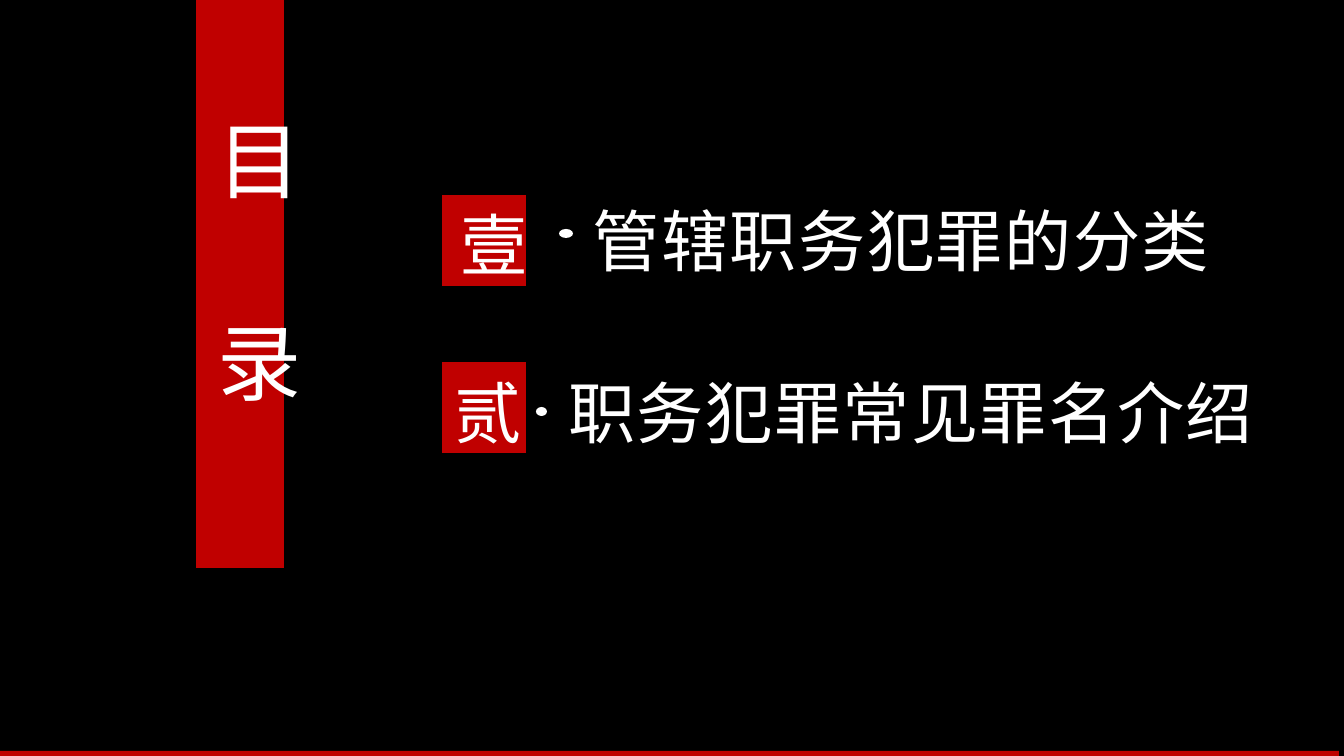
from pptx import Presentation
from pptx.dml.color import RGBColor
from pptx.enum.shapes import MSO_SHAPE
from pptx.enum.text import PP_ALIGN
from pptx.util import Emu, Pt

# Boxes are (left, top, width, height) in px
HEADING = ("目", "录")
HEADING_BOX = (208, 95, 64, 315)
BANNER = (196, -2, 88, 570)
FOOTER_LINE = (0, 751, 1339, 5)
ENTRIES = [
    {
        "square": (442, 195, 84, 91),
        "number": ("壹", (447, 192, 95, 92)),
        "dot": (559, 229, 14, 9),
        "title": ("管辖职务犯罪的分类", (574, 188, 654, 173)),
    },
    {
        "square": (442, 362, 84, 91),
        "number": ("贰", (435, 360, 106, 92)),
        "dot": (536, 407, 11, 9),
        "title": ("职务犯罪常见罪名介绍", (547, 360, 728, 173)),
    },
]

PX_PER_INCH = 100.8
FONT = "Noto Sans CJK SC"
HEADING_SIZE, ENTRY_SIZE = 60, 48
LINE_HEIGHT = 1.2  # in font sizes
TOP_INSET = 0.1  # in font sizes, added to the normal inset
BLACK = RGBColor(0x00, 0x00, 0x00)
RED = RGBColor(0xC0, 0x00, 0x00)
WHITE = RGBColor(0xFF, 0xFF, 0xFF)


def px(length):
    return Emu(round(length * 914400 / PX_PER_INCH))


def add_block(slide, box, color, preset=MSO_SHAPE.RECTANGLE):
    shape = slide.shapes.add_shape(preset, *map(px, box))
    shape.shadow.inherit = False
    shape.fill.solid()
    shape.fill.fore_color.rgb = color
    shape.line.fill.background()


def add_text(slide, lines, box, size):
    """Add centred white lines, with one empty line's height between them."""
    frame = slide.shapes.add_textbox(*map(px, box)).text_frame
    frame.word_wrap = True
    frame.margin_top = Pt(3.6 + TOP_INSET * size)
    for index, line in enumerate(lines):
        paragraph = frame.add_paragraph() if index else frame.paragraphs[0]
        paragraph.alignment = PP_ALIGN.CENTER
        paragraph.line_spacing = Pt(LINE_HEIGHT * size)
        if index:
            paragraph.space_before = Pt(LINE_HEIGHT * size)
        run = paragraph.add_run()
        run.text = line
        run.font.size = Pt(size)
        run.font.name = FONT
        run.font.color.rgb = WHITE
        properties = run._r.get_or_add_rPr()
        properties.set("spc", "110")
        latin = properties.find("{*}latin")
        east_asian = latin.makeelement(latin.tag.replace("latin", "ea"), {"typeface": FONT})
        latin.addnext(east_asian)


def main():
    presentation = Presentation()
    presentation.slide_width = px(1344)
    presentation.slide_height = px(756)
    slide = presentation.slides.add_slide(presentation.slide_layouts[6])
    slide.background.fill.solid()
    slide.background.fill.fore_color.rgb = BLACK

    add_block(slide, BANNER, RED)
    add_text(slide, HEADING, HEADING_BOX, HEADING_SIZE)
    add_block(slide, FOOTER_LINE, RED)
    for entry in ENTRIES:
        add_block(slide, entry["square"], RED)
        add_block(slide, entry["dot"], WHITE, MSO_SHAPE.FLOWCHART_CONNECTOR)
        for part in ("number", "title"):
            text, box = entry[part]
            add_text(slide, [text], box, ENTRY_SIZE)

    presentation.save("out.pptx")


if __name__ == "__main__":
    main()
